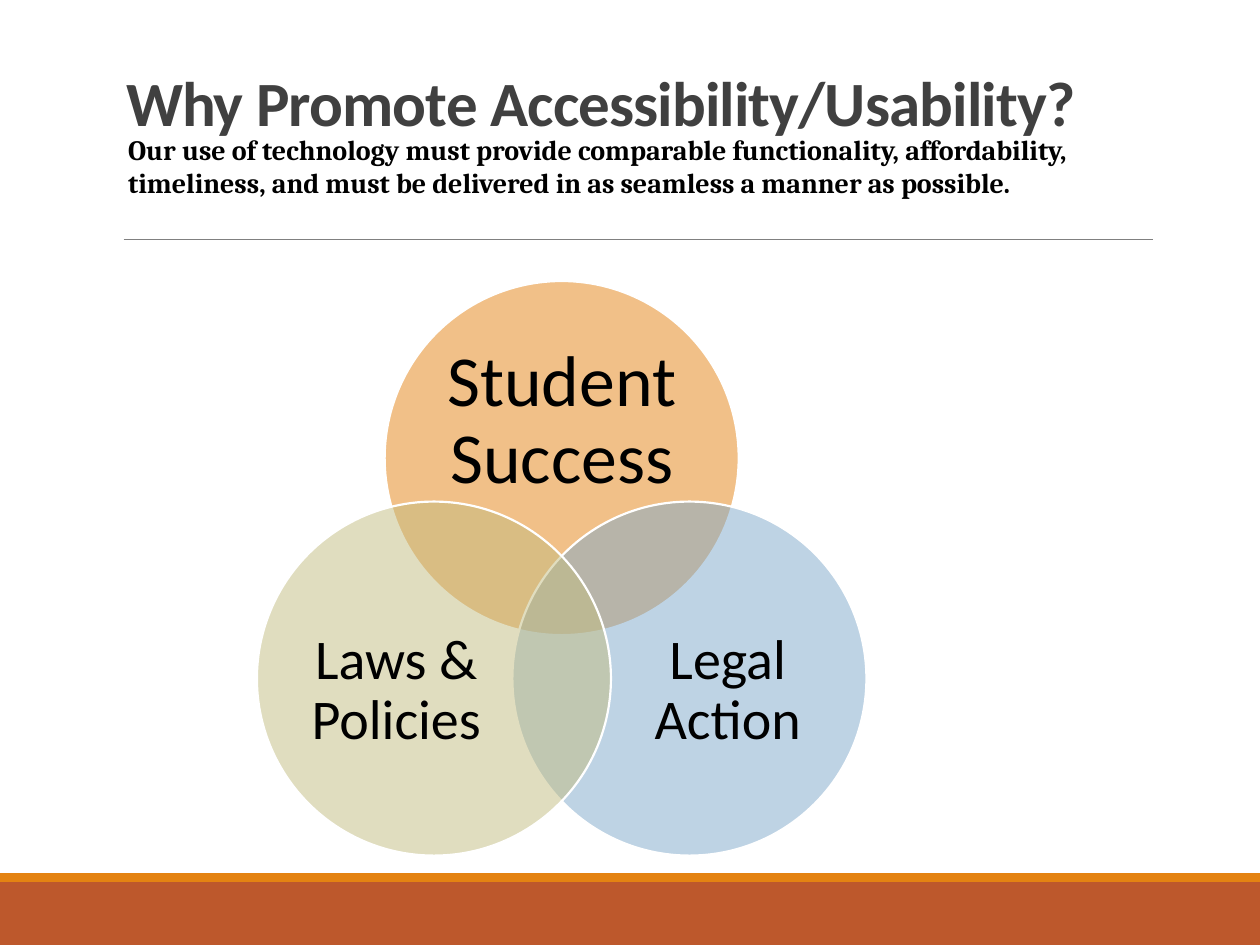
from lxml import etree
from pptx import Presentation
from pptx.dml.color import RGBColor
from pptx.enum.shapes import MSO_CONNECTOR, MSO_SHAPE
from pptx.enum.text import MSO_ANCHOR, MSO_AUTO_SIZE, PP_ALIGN
from pptx.oxml.ns import qn
from pptx.util import Pt

RECT, OVAL = MSO_SHAPE.RECTANGLE, MSO_SHAPE.OVAL
LINE = MSO_CONNECTOR.STRAIGHT
TOP, MID, BASE = MSO_ANCHOR.TOP, MSO_ANCHOR.MIDDLE, MSO_ANCHOR.BOTTOM
LEFT, CENTER = PP_ALIGN.LEFT, PP_ALIGN.CENTER
FIXED = MSO_AUTO_SIZE.NONE

COLORS = {
    "rust": "BD582C", "orange": "E48312", "blue": "7EA9CA",
    "sand": "C2BC80", "gray": "808080", "dark": "404040",
    "black": "000000", "white": "FFFFFF",
}
WIDE, HIGH = 720, 540
DISC = 202.3  # circle diameter

# Circle left and top, colour, label, label box, text size
DISCS = [
    (219.8, 160.6, "orange", "Student Success", (247, 195.8, 148.3, 90.7), 41),
    (292.8, 286.6, "blue", "Legal Action", (355, 339.1, 121.7, 111.6), 32),
    (146.8, 286.6, "sand", "Laws & Policies", (165.6, 339.1, 121.7, 111.6), 32),
]


def color(name):
    return RGBColor.from_string(COLORS[name])


def assign(item, values):
    for name, value in values.items():
        setattr(item, name, value)


def place(item, box):
    names = ("left", "top", "width", "height")
    assign(item, {name: Pt(size) for name, size in zip(names, box)})


def write(item, text, font, tint, frame, para):
    """Fill a text frame with one formatted paragraph and return its run."""
    body = item.text_frame
    assign(body, {"word_wrap": True, "auto_size": FIXED, **frame})
    line = body.paragraphs[0]
    assign(line, para)
    run = line.add_run()
    run.text = text
    assign(run.font, font)
    run.font.color.rgb = color(tint)
    return run


def add_form(slide, kind, box, tint, alpha=None):
    form = slide.shapes.add_shape(kind, *map(Pt, box))
    form.shadow.inherit = False
    form.fill.solid()
    form.fill.fore_color.rgb = color(tint)
    if alpha is None:
        form.line.fill.background()
    else:
        fill = form.fill._xPr.find(qn("a:solidFill"))[0]
        etree.SubElement(fill, qn("a:alpha"), val=str(alpha * 1000))
        form.line.color.rgb = color("white")
        form.line.width = Pt(1.25)


def add_text(slide, box, *style):
    write(slide.shapes.add_textbox(*map(Pt, box)), *style)


def add_rule(slide, x1, x2, y):
    rule = slide.shapes.add_connector(LINE, Pt(x1), Pt(y), Pt(x2), Pt(y))
    rule.line.color.rgb = color("gray")
    rule.line.width = Pt(0.5)
    etree.SubElement(rule._element.spPr, qn("a:effectLst"))


def add_title(slide):
    title = slide.shapes.title
    place(title, (64.8, 22.3, 643, 61.2))
    run = write(title, "Why Promote Accessibility/Usability?",
                {"name": "Calibri", "size": Pt(36), "bold": True}, "dark",
                {"vertical_anchor": BASE},
                {"alignment": LEFT, "line_spacing": 0.85})
    run.font._element.set("spc", "-50")


def add_venn(slide):
    flush = {"margin_" + side: 0 for side in ("left", "top", "right", "bottom")}
    for x, y, tint, text, box, size in DISCS:
        add_form(slide, OVAL, (x, y, DISC, DISC), tint, 50)
        add_text(slide, box, text, {"name": "Calibri", "size": Pt(size)},
                 "black", {"vertical_anchor": MID, **flush},
                 {"alignment": CENTER, "line_spacing": 0.9})


def main():
    deck = Presentation()
    assign(deck, {"slide_width": Pt(WIDE), "slide_height": Pt(HIGH)})
    slide = deck.slides.add_slide(deck.slide_layouts[5])

    # Footer bands and header rule
    add_form(slide, RECT, (0, 504, WIDE, 36), "rust")
    add_form(slide, RECT, (0, 499, WIDE, 5), "orange")
    add_rule(slide, 70.6, 658.8, 136.8)

    # Title, circles and statement
    add_title(slide)
    add_venn(slide)
    add_text(slide, (66.2, 72, 594.7, 87.1),
             "Our use of technology must provide comparable functionality, "
             "affordability, timeliness, and must be delivered in as seamless "
             "a manner as possible.",
             {"name": "Cambria", "size": Pt(16), "bold": True}, "black",
             {"vertical_anchor": TOP}, {"alignment": LEFT})

    deck.save("out.pptx")


if __name__ == "__main__":
    main()
